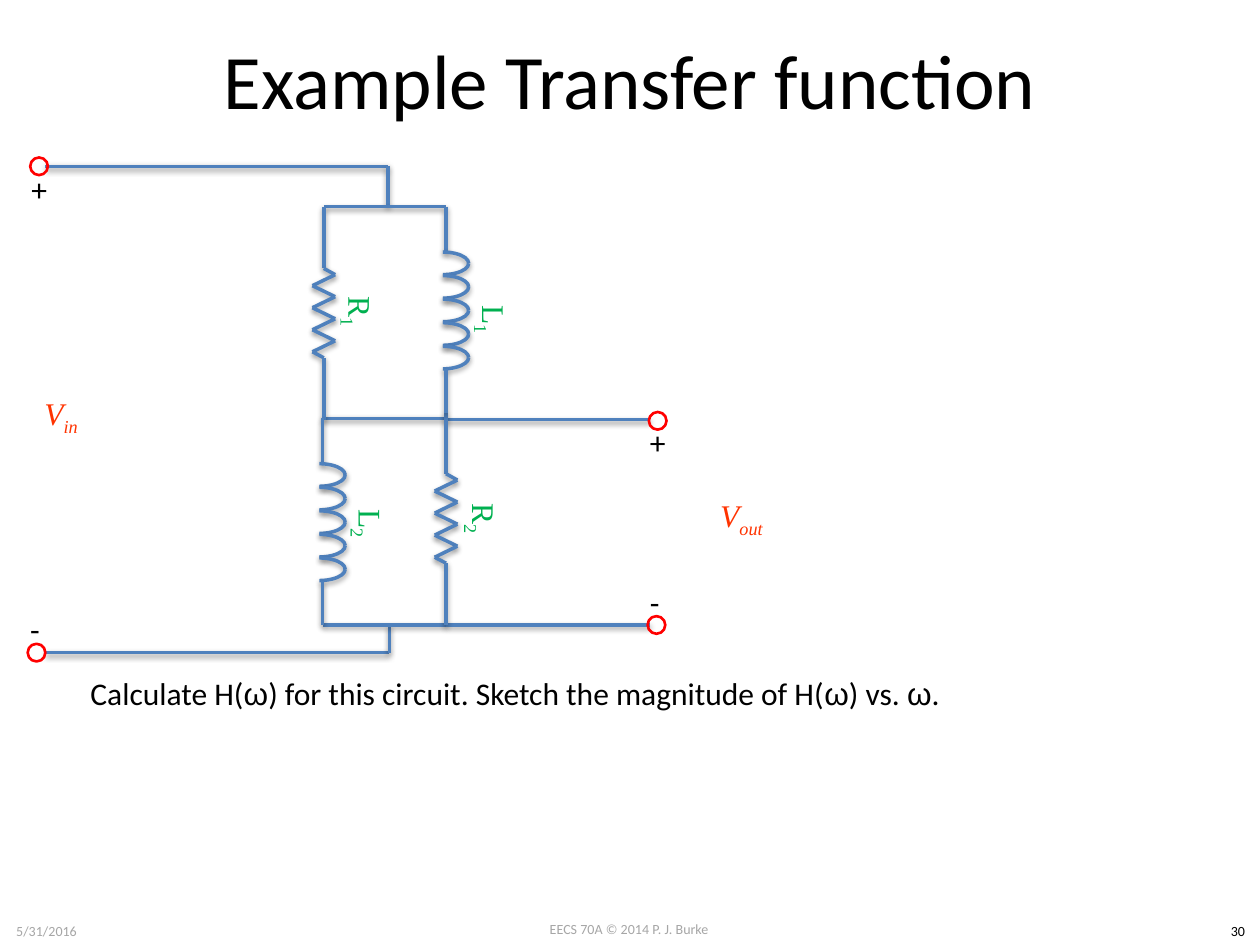
from dataclasses import dataclass
from itertools import pairwise

from pptx import Presentation
from pptx.dml.color import RGBColor
from pptx.enum import shapes, text
from pptx.util import Inches, Pt

COLORS = {
    "wire": "4F81BD",
    "terminal": "FF0000",
    "voltage": "FF3300",
    "component": "00B050",
    "black": "000000",
    "footer": "A6A6A6",
}
CENTER = text.PP_ALIGN.CENTER
LEFT = text.PP_ALIGN.LEFT
WIRE_WIDTH = 2
TURNS = 5
TURN_PITCH = 0.187
ZIGZAGS = 8
ZIGZAG_PITCH = 0.0875


@dataclass
class Run:
    text: str
    font: str = "Calibri"
    subscript: bool = False


@dataclass
class Label:
    box: tuple[float, float, float, float]
    runs: list[Run]
    color: str = "black"
    size: float = 18
    align: text.PP_ALIGN = LEFT
    middle: bool = False
    wrap: bool = True
    italic: bool = False
    rotation: float = 0


@dataclass
class Terminal:
    left: float
    top: float
    sign: str
    sign_box: tuple[float, float, float, float]


@dataclass
class Component:
    x: float
    top: float


def write_runs(paragraph, runs: list[Run], size: float, color: str, italic: bool = False) -> None:
    for item in runs:
        run = paragraph.add_run()
        run.text = item.text
        formats = {"name": item.font, "size": Pt(size), "italic": italic}
        for name, value in formats.items():
            setattr(run.font, name, value)
        run.font.color.rgb = RGBColor.from_string(COLORS[color])
        if item.subscript:
            run.font._element.set("baseline", "-25000")


def add_label(slide, label: Label) -> None:
    shape = slide.shapes.add_textbox(*map(Inches, label.box))
    shape.rotation = label.rotation
    frame = shape.text_frame
    frame.word_wrap = label.wrap
    frame.vertical_anchor = text.MSO_ANCHOR.MIDDLE if label.middle else text.MSO_ANCHOR.TOP
    paragraph = frame.paragraphs[0]
    paragraph.alignment = label.align
    write_runs(paragraph, label.runs, label.size, label.color, label.italic)


def format_line(shape, color: str, width: float) -> None:
    shape.line.color.rgb = RGBColor.from_string(COLORS[color])
    shape.line.width = Pt(width)


def add_wire(slide, points: list[tuple[float, float]]) -> None:
    for start, end in pairwise(points):
        wire = slide.shapes.add_connector(
            shapes.MSO_CONNECTOR.STRAIGHT, *map(Inches, (*start, *end))
        )
        format_line(wire, "wire", WIRE_WIDTH)


def add_resistor(slide, resistor: Component) -> None:
    x, top = resistor.x, resistor.top
    zigzag = [
        (x + (-0.09 if index % 2 else 0.09), top + 0.54 + index * ZIGZAG_PITCH)
        for index in range(ZIGZAGS)
    ]
    add_wire(slide, [(x, top), (x, top + 0.49), *zigzag, (x, top + 1.2), (x, top + 1.69)])


def add_inductor(slide, inductor: Component) -> None:
    x, top = inductor.x, inductor.top
    add_wire(slide, [(x, top), (x, top + 0.36)])
    for turn in range(TURNS):
        for flipped in (False, True):
            arc = slide.shapes.add_shape(
                shapes.MSO_SHAPE.ARC,
                *map(Inches, (x - 0.23, top + 0.36 + turn * TURN_PITCH, 0.41, 0.18)),
            )
            arc.fill.background()
            format_line(arc, "wire", WIRE_WIDTH)
            arc._element.xpath("./p:style/a:effectRef")[0].set("idx", "1")
            if flipped:
                arc._element.spPr.xfrm.set("flipV", "1")
    add_wire(slide, [(x, top + 1.29), (x, top + 1.64)])


def add_terminal(slide, terminal: Terminal) -> None:
    circle = slide.shapes.add_shape(
        shapes.MSO_SHAPE.OVAL, *map(Inches, (terminal.left, terminal.top, 0.14, 0.14))
    )
    circle.shadow.inherit = False
    circle.fill.background()
    format_line(circle, "terminal", 1.5)
    add_label(slide, Label(terminal.sign_box, [Run(terminal.sign)], wrap=False))


def symbol(box: tuple, letter: str, index: str, color: str, **options) -> Label:
    runs = [Run(letter, "Times New Roman"), Run(index, "Times New Roman", True)]
    return Label(box, runs, color, align=CENTER, middle=True, **options)


def main() -> None:
    presentation = Presentation()
    presentation.slide_width = Inches(10)
    presentation.slide_height = Inches(7.5)
    slide = presentation.slides.add_slide(presentation.slide_layouts[5])

    title = slide.shapes.title
    title_box = {"left": 0.5, "top": 0, "width": 9, "height": 1.25}
    for name, value in title_box.items():
        setattr(title, name, Inches(value))
    title.text_frame.vertical_anchor = text.MSO_ANCHOR.MIDDLE
    title_paragraph = title.text_frame.paragraphs[0]
    title_paragraph.alignment = CENTER
    write_runs(title_paragraph, [Run("Example Transfer function")], 44, "black")

    omega = Run("ω", "Arial")
    task = [
        Run("Calculate H("), omega, Run(") for this circuit. Sketch the magnitude of H("),
        omega, Run(") vs. "), omega, Run("."),
    ]
    add_label(slide, Label((0.62, 5.3, 8.03, 0.4), task))

    footers = [
        ((3.83, 7.26, 2.33, 0.24), "EECS 70A © 2014 P. J. Burke", "footer"),
        ((0, 7.27, 0.74, 0.24), "5/31/2016", "footer"),
        ((9.65, 7.27, 0.35, 0.24), "30", "black"),
    ]
    for box, wording, color in footers:
        add_label(slide, Label(box, [Run(wording)], color, 8, CENTER, wrap=False))

    wires = [
        [(0.36, 1.32), (3.08, 1.32), (3.08, 1.64)],
        [(0.36, 5.18), (3.09, 5.18), (3.09, 4.96)],
        [(2.57, 1.64), (3.54, 1.64)],
        [(2.56, 3.32), (3.54, 3.32)],
        [(2.56, 4.96), (3.54, 4.96)],
        [(3.54, 3.33), (5.16, 3.33)],
        [(3.54, 4.96), (5.16, 4.96)],
    ]
    for points in wires:
        add_wire(slide, points)
    for resistor in (Component(2.57, 1.64), Component(3.54, 3.27)):
        add_resistor(slide, resistor)
    for inductor in (Component(3.54, 1.64), Component(2.56, 3.32)):
        add_inductor(slide, inductor)

    terminals = [
        Terminal(0.24, 1.25, "+", (0.15, 1.3, 0.33, 0.4)),
        Terminal(0.22, 5.11, "-", (0.14, 4.79, 0.28, 0.4)),
        Terminal(5.15, 3.27, "+", (5.06, 3.31, 0.33, 0.4)),
        Terminal(5.14, 4.89, "-", (5.06, 4.58, 0.28, 0.4)),
    ]
    for terminal in terminals:
        add_terminal(slide, terminal)

    for left, top, index in ((0.1, 2.99, "in"), (5.5, 3.8, "out")):
        add_label(slide, symbol((left, top, 0.77, 0.61), "V", index, "voltage", italic=True))
    names = [(2.25, 2.11, "R", "1"), (3.31, 2.17, "L", "1"), (3.23, 3.75, "R", "2"), (2.33, 3.79, "L", "2")]
    for left, top, letter, index in names:
        add_label(slide, symbol((left, top, 1.19, 0.73), letter, index, "component", rotation=90))

    presentation.save("out.pptx")


if __name__ == "__main__":
    main()
